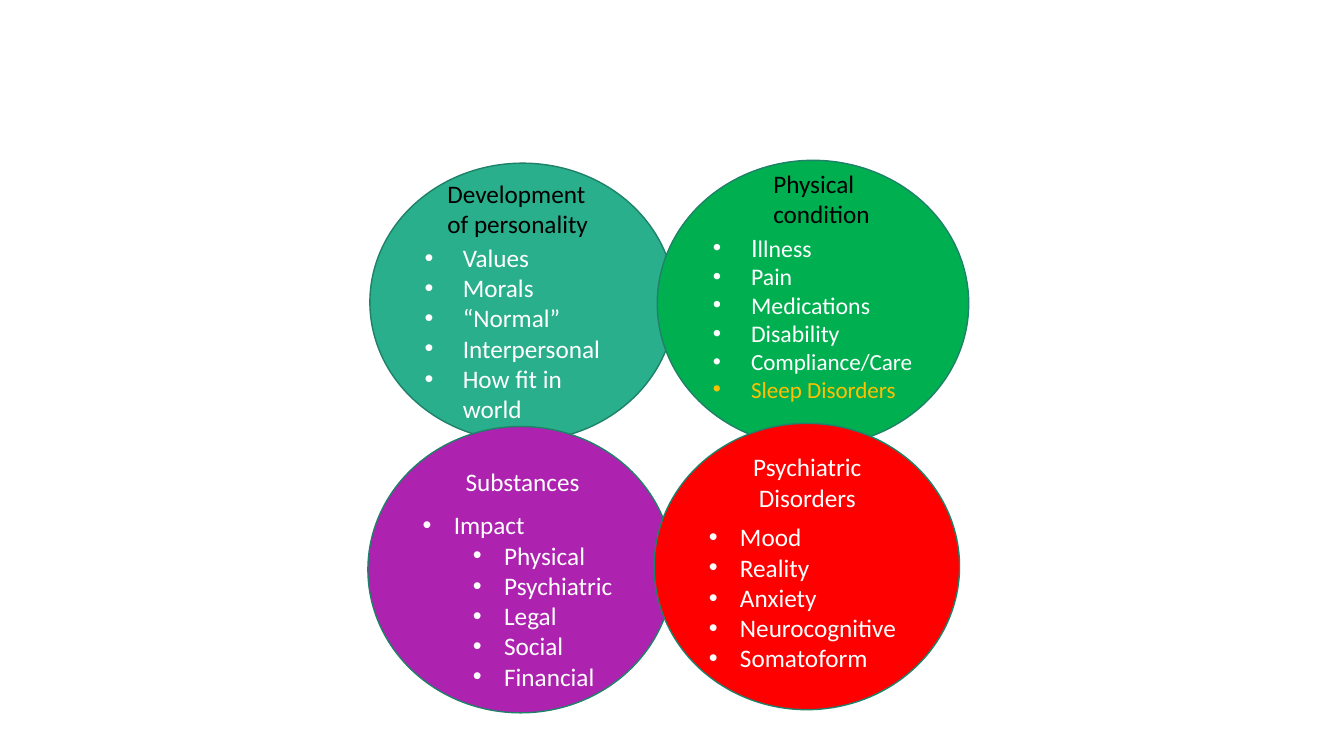
import pptx
import pptx.util
import pptx.dml.color
import pptx.enum.shapes
import pptx.enum.text
import lxml.etree

WHITE, BLACK = "FFFFFF", "000000"
COLS, ROWS = 40, 24
WIDE, HIGH = 13.33, 7.5
LEAD = 1.22  # line height as a share of the text size


def tint(code):
    return pptx.dml.color.RGBColor.from_string(code)


def apply(target, values):
    for name, value in values.items():
        setattr(target, name, value)


class Board:
    """Holds the slide and its style; boxes are (column, row, columns, rows)."""

    font = "Calibri"
    edge = "1E8168"

    def __init__(self, deck):
        self.slide = deck.slides.add_slide(deck.slide_layouts[6])

    def place(self, box):
        col, row, wide, high = box
        step, rise = WIDE / COLS, HIGH / ROWS
        return [pptx.util.Inches(n) for n in
                (col * step, row * rise, wide * step, high * rise)]

    def label(self, para, text, size, color, font=None):
        run = para.add_run()
        run.text = text
        apply(run.font, {"size": pptx.util.Pt(size), "name": font or self.font})
        run.font.color.rgb = tint(color)

    def bullet(self, para, left, hang):
        props = para._p.get_or_add_pPr()
        props.set("marL", str(pptx.util.Inches(left)))
        props.set("indent", str(-pptx.util.Inches(hang)))
        space = "{http://schemas.openxmlformats.org/drawingml/2006/main}"
        lxml.etree.SubElement(props, space + "buFont", typeface="Arial")
        lxml.etree.SubElement(props, space + "buChar", char="•")

    def circle(self, box, fill, items, hang, size, skip):
        """Draw a circle whose list leaves room for skip title lines."""
        kind = pptx.enum.shapes.MSO_SHAPE.FLOWCHART_CONNECTOR
        shape = self.slide.shapes.add_shape(kind, *self.place(box))
        shape.shadow.inherit = False
        shape.fill.solid()
        shape.fill.fore_color.rgb = tint(fill)
        shape.line.color.rgb = tint(self.edge)
        shape.line.width = pptx.util.Pt(1)
        frame = shape.text_frame
        apply(frame, {
            "word_wrap": True,
            "vertical_anchor": pptx.enum.text.MSO_ANCHOR.MIDDLE,
            "margin_top": pptx.util.Pt(3.6 + skip * size * LEAD),
        })
        for num, (level, runs) in enumerate(items):
            para = frame.add_paragraph() if num else frame.paragraphs[0]
            apply(para, {"level": level,
                         "alignment": pptx.enum.text.PP_ALIGN.LEFT})
            self.bullet(para, hang + level / 2, hang)
            for text, style in runs:
                self.label(para, text, **{"size": size, "color": WHITE, **style})

    def title(self, box, lines, color):
        frame = self.slide.shapes.add_textbox(*self.place(box)).text_frame
        frame.word_wrap = True
        for num, line in enumerate(lines):
            para = frame.add_paragraph() if num else frame.paragraphs[0]
            self.label(para, line, 18, color)


def plain(*words, level=0):
    return [(level, [(word, {})]) for word in words]


TRAITS = plain("Values", "Morals", "“Normal”", "Interpersonal",
               "How fit in world")
HEALTH = [
    (0, [("I", {"font": "Lato"}), ("llness", {})]),
    *plain("Pain", "Medications", "Disability"),
    (0, [("Compliance/Care", {"size": 16.5})]),
    (0, [("Sleep Disorders", {"size": 16.5, "color": "FFC000"})]),
]
IMPACT = plain("Impact") + plain("Physical", "Psychiatric", "Legal", "Social",
                                 "Financial", level=1)
MIND = plain("Mood", "Reality", "Anxiety", "Neurocognitive", "Somatoform")

# circle: box, fill, items, hang, size, skip; title: box, lines, color
THEMES = [
    (((11.01, 5.18, 9.09, 8.83), "29AF8C", TRAITS, 0.38, 18, 2),
     ((13.02, 5.5, 5.07, 3.23), ["Development", "of personality"], BLACK)),
    (((19.56, 5.09, 9.27, 9.09), "00B050", HEALTH, 0.38, 17, 1),
     ((22.72, 5.18, 3.54, 2.27), ["Physical condition"], BLACK)),
    (((10.95, 13.54, 9.09, 9.09), "AD23B0", IMPACT, 0.31, 18, 2),
     ((13.56, 14.66, 4.38, 1.28), ["Substances"], WHITE)),
    (((19.47, 13.44, 9.09, 9.09), "FF0000", MIND, 0.31, 18, 2),
     ((22.12, 14.18, 4.38, 2.27), ["Psychiatric", " Disorders"], WHITE)),
]


def main():
    deck = pptx.Presentation()
    apply(deck, {"slide_width": pptx.util.Inches(WIDE),
                 "slide_height": pptx.util.Inches(HIGH)})
    board = Board(deck)
    for circle, title in THEMES:
        board.circle(*circle)
        board.title(*title)
    deck.save("out.pptx")


if __name__ == "__main__":
    main()
